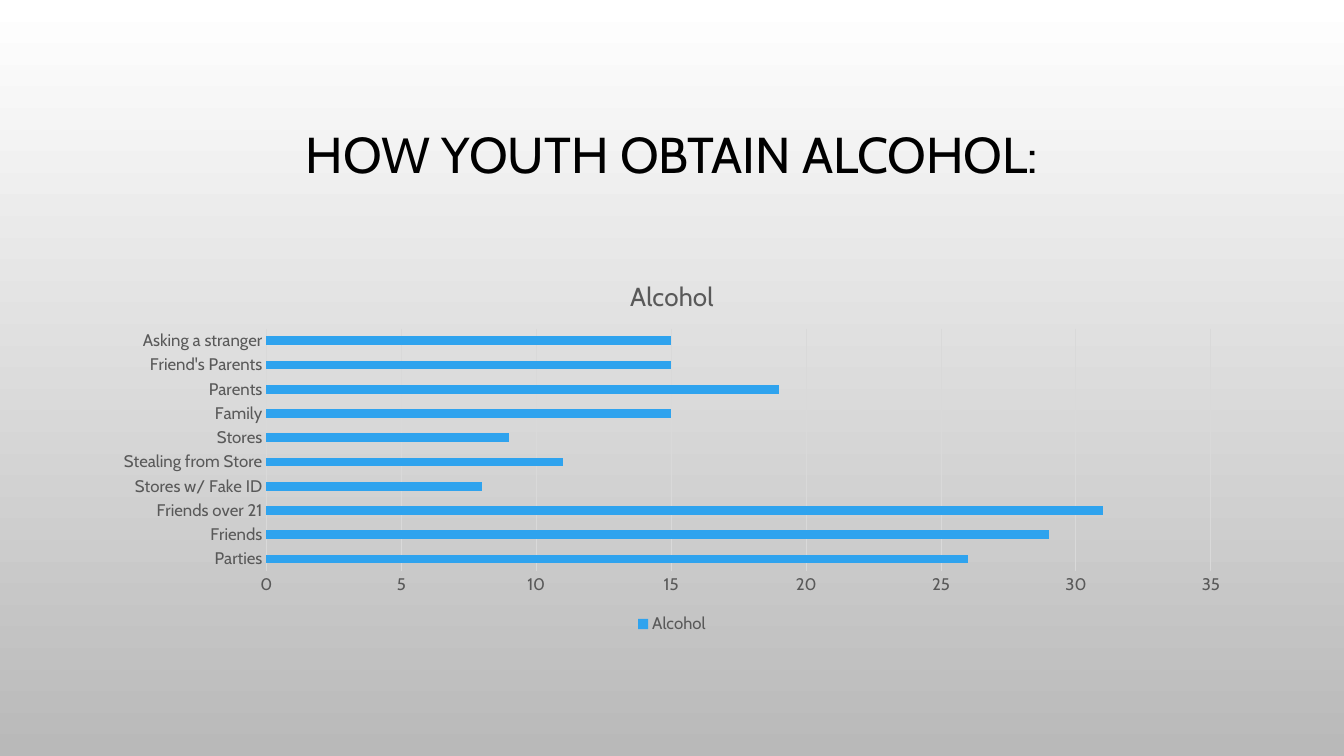
from pptx import Presentation
from pptx.chart.data import CategoryChartData
from pptx.dml.color import RGBColor
from pptx.enum.chart import XL_CHART_TYPE, XL_LEGEND_POSITION, XL_TICK_MARK
from pptx.enum.text import MSO_ANCHOR, PP_ALIGN
from pptx.util import Emu, Pt

SCALE = 914400 / 100.8
FONT = "Cabin"
BLACK = RGBColor(0x00, 0x00, 0x00)
WHITE = RGBColor(0xFF, 0xFF, 0xFF)
SILVER = RGBColor(0xB9, 0xB9, 0xB9)
GRAY = RGBColor(0x59, 0x59, 0x59)
PALE = RGBColor(0xD9, 0xD9, 0xD9)
BLUE = RGBColor(0x2F, 0xA3, 0xEE)

SOURCES = {
    "Parties": 26,
    "Friends": 29,
    "Friends over 21": 31,
    "Stores w/ Fake ID": 8,
    "Stealing from Store": 11,
    "Stores": 9,
    "Family": 15,
    "Parents": 19,
    "Friend's Parents": 15,
    "Asking a stranger": 15,
}


def px(count):
    return Emu(round(count * SCALE))


def style(font, size, color):
    font.name = FONT
    font.size = Pt(size)
    font.bold = False
    font.color.rgb = color


def write(frame, text, size=12, color=GRAY, align=PP_ALIGN.CENTER, spacing=None):
    frame.text = text
    line = frame.paragraphs[0]
    line.alignment = align
    line.line_spacing = spacing
    style(line.runs[0].font, size, color)


class Deck:
    def __init__(self, width, height):
        self.show = Presentation()
        self.show.slide_width = px(width)
        self.show.slide_height = px(height)
        self.slide = self.show.slides.add_slide(self.show.slide_layouts[5])

    def backdrop(self, top, bottom):
        fill = self.slide.background.fill
        fill.gradient()
        fill.gradient_angle = 270
        for stop, color in zip(fill.gradient_stops, (top, bottom)):
            stop.color.rgb = color

    def title(self, text, left, top, width, height):
        shape = self.slide.shapes.title
        shape.left, shape.top = px(left), px(top)
        shape.width, shape.height = px(width), px(height)
        shape.text_frame.word_wrap = True
        shape.text_frame.vertical_anchor = MSO_ANCHOR.MIDDLE
        write(shape.text_frame, text, size=36, color=BLACK, spacing=0.9)

    def bars(self, name, values, left, top, width, height):
        data = CategoryChartData()
        data.categories = list(values)
        data.add_series(name, list(values.values()))
        chart = self.slide.shapes.add_chart(
            XL_CHART_TYPE.BAR_CLUSTERED,
            px(left), px(top), px(width), px(height), data,
        ).chart
        style(chart.font, 10, BLACK)
        chart.has_title = True
        write(chart.chart_title.text_frame, name, size=18.6)
        chart.chart_title.include_in_layout = False

        chart.has_legend = True
        chart.legend.position = XL_LEGEND_POSITION.BOTTOM
        chart.legend.include_in_layout = False
        style(chart.legend.font, 12, GRAY)

        plot = chart.plots[0]
        plot.gap_width = 182
        plot.vary_by_categories = False
        fill = plot.series[0].format.fill
        fill.solid()
        fill.fore_color.rgb = BLUE
        self.axes(chart)

    def axes(self, chart):
        names, scale = chart.category_axis, chart.value_axis
        for axis in (names, scale):
            axis.major_tick_mark = XL_TICK_MARK.NONE
            axis.minor_tick_mark = XL_TICK_MARK.NONE
            style(axis.tick_labels.font, 12, GRAY)
        names.has_major_gridlines = False
        scale.has_major_gridlines = True
        scale.minimum_scale, scale.maximum_scale = 0, 35
        scale.major_unit = 5
        scale.format.line.fill.background()
        for line in (names.format.line, scale.major_gridlines.format.line):
            line.color.rgb = PALE
            line.width = Pt(0.75)


def main():
    deck = Deck(1344, 756)
    deck.backdrop(WHITE, SILVER)
    deck.title("HOW YOUTH OBTAIN ALCOHOL:", 101, 69, 1142, 176)
    deck.bars("Alcohol", SOURCES, 101, 261, 1142, 377)
    deck.show.save("out.pptx")


if __name__ == "__main__":
    main()
